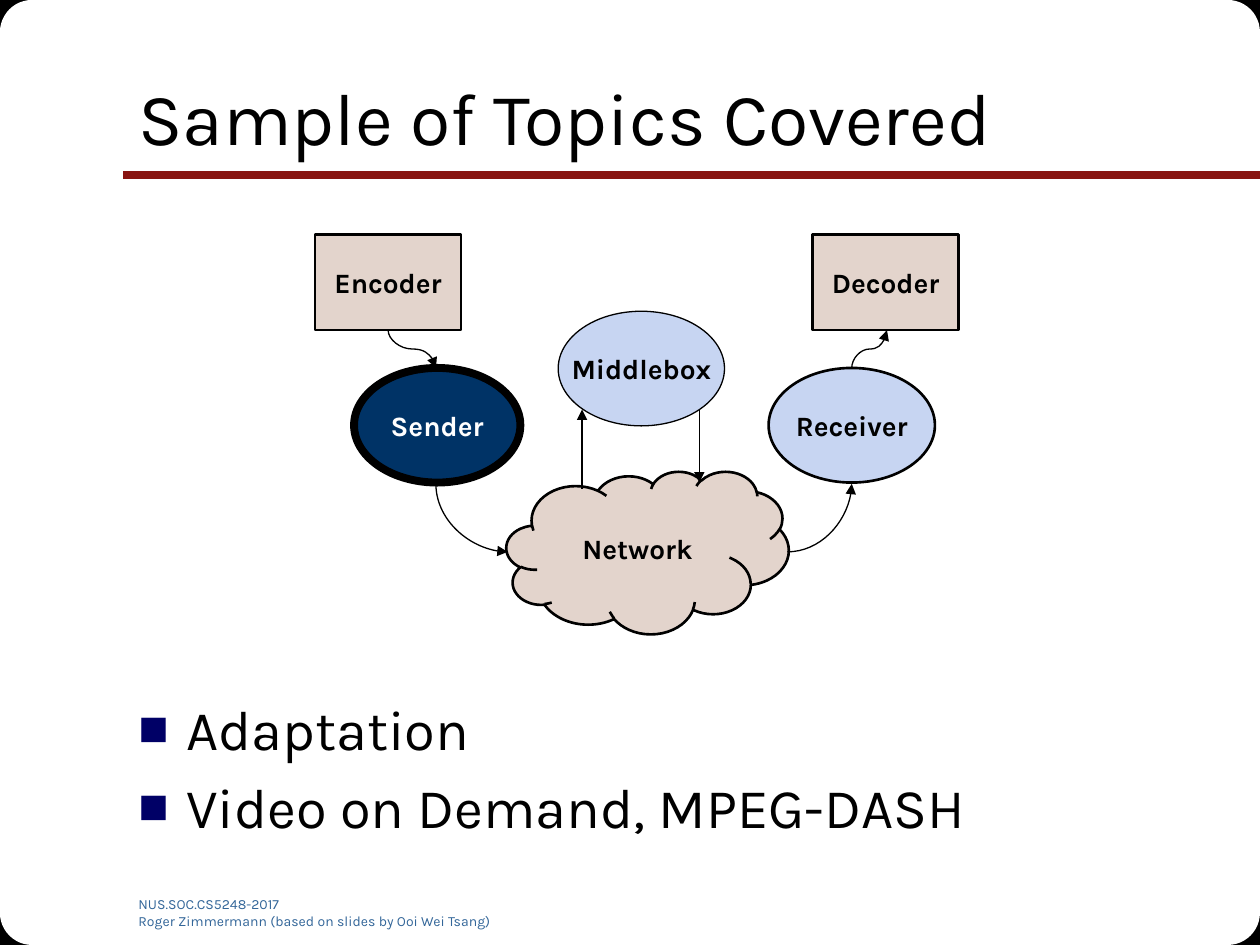
from lxml import etree
from pptx import Presentation
from pptx import util as u
from pptx.dml.color import RGBColor
from pptx.enum import shapes, text
from pptx.oxml.ns import qn

FONT = "Karla"
BLACK = RGBColor(0, 0, 0)
WHITE = RGBColor(255, 255, 255)
RED = RGBColor(0x89, 0x14, 0x11)
STEEL = RGBColor(0x33, 0x66, 0x99)
NAVY = RGBColor(0x00, 0x33, 0x66)
SAND = RGBColor(0xE3, 0xD4, 0xCC)
SKY = RGBColor(0xC7, 0xD5, 0xF2)
BULLET = "000066"

W, H = 10, 7.5
MARGIN = 1
CORNER, ROUND = (0.43, 0.44), (1.53, 1.53)

TITLE = "Sample of Topics Covered"
TOPICS = ["Adaptation", "Video on Demand, MPEG-DASH"]
FOOTER = ["NUS.SOC.CS5248-2017",
          "Roger Zimmermann (based on slides by Ooi Wei Tsang)"]

RECT = shapes.MSO_SHAPE.RECTANGLE
OVAL = shapes.MSO_SHAPE.OVAL
CLOUD = shapes.MSO_SHAPE.CLOUD
SIZES = {RECT: (1.16, 0.76), OVAL: (1.32, 0.91), CLOUD: (2.24, 1.29)}

# label, shape, left, top, fill, line width, text colour
NODES = [
    ("Network", CLOUD, 4.02, 3.74, SAND, 1.5, BLACK),
    ("Encoder", RECT, 2.5, 1.86, SAND, 1.5, BLACK),
    ("Sender", OVAL, 2.81, 2.92, NAVY, 4.5, WHITE),
    ("Middlebox", OVAL, 4.43, 2.47, SKY, 0.75, BLACK),
    ("Receiver", OVAL, 6.1, 2.92, SKY, 1.5, BLACK),
    ("Decoder", RECT, 6.45, 1.86, SAND, 1.5, BLACK),
]

# start, end, preset, whether the curve leaves its start vertically
ARROWS = [
    ((3.08, 2.62), (3.46, 2.92), "curvedConnector3", True),
    ((3.46, 3.84), (4.03, 4.38), "curvedConnector2", True),
    ((4.62, 3.88), (4.62, 3.25), "line", False),
    ((5.55, 3.25), (5.55, 3.83), "line", False),
    ((6.25, 4.38), (6.76, 3.84), "curvedConnector2", False),
    ((6.76, 2.92), (7.04, 2.62), "curvedConnector3", True),
]


def write(sp, lines, size, color=BLACK, bold=False, align=text.PP_ALIGN.LEFT,
          anchor=text.MSO_ANCHOR.TOP, wrap=True):
    tf = sp.text_frame
    tf.word_wrap = wrap
    tf.vertical_anchor = anchor
    for i, line in enumerate(lines):
        p = tf.add_paragraph() if i else tf.paragraphs[0]
        p.alignment = align
        r = p.add_run()
        r.text = line
        r.font.name, r.font.size, r.font.bold = FONT, u.Pt(size), bold
        r.font.color.rgb = color
    return tf


def add_text(slide, box, lines, size, **fmt):
    return write(slide.shapes.add_textbox(*map(u.Inches, box)), lines, size, **fmt)


def add_shape(slide, kind, box, fill, line=None):
    sp = slide.shapes.add_shape(kind, *map(u.Inches, box))
    sp.shadow.inherit = False
    sp.fill.solid()
    sp.fill.fore_color.rgb = fill
    if line:
        sp.line.color.rgb, sp.line.width = BLACK, u.Pt(line)
    else:
        sp.line.fill.background()
    return sp


def add_line(slide, start, end, color, width):
    sp = slide.shapes.add_connector(shapes.MSO_CONNECTOR.STRAIGHT,
                                    *map(u.Inches, (*start, *end)))
    sp.line.color.rgb, sp.line.width = color, u.Pt(width)
    etree.SubElement(sp._element.spPr, qn("a:effectLst"))
    return sp


def add_arrow(slide, start, end, preset, vertical):
    """A curve that leaves vertically is a horizontal one turned by 270 degrees."""
    if vertical:
        (x1, y1), (x2, y2) = start, end
        cx, cy = (x1 + x2) / 2, (y1 + y2) / 2
        dx, dy = (x2 - x1) / 2, (y2 - y1) / 2
        start, end = (cx + dy, cy - dx), (cx - dy, cy + dx)
    sp = add_line(slide, start, end, BLACK, 0.75)
    spPr = sp._element.spPr
    spPr.find(qn("a:prstGeom")).set("prst", preset)
    if vertical:
        spPr.find(qn("a:xfrm")).set("rot", str(270 * 60000))
    etree.SubElement(spPr.find(qn("a:ln")), qn("a:tailEnd"), type="triangle")


def add_bullet(p):
    pPr = p._p.get_or_add_pPr()
    pPr.set("marL", str(u.Inches(0.38)))
    pPr.set("indent", str(-u.Inches(0.38)))
    color = etree.SubElement(pPr, qn("a:buClr"))
    etree.SubElement(color, qn("a:srgbClr"), val=BULLET)
    etree.SubElement(pPr, qn("a:buSzPct"), val="90000")
    etree.SubElement(pPr, qn("a:buFont"), typeface="Arial")
    etree.SubElement(pPr, qn("a:buChar"), char="■")


def add_frame(slide):
    """Black slide corners, rounded off by white squares on top."""
    for kind, (w, h), fill, line in (
            (RECT, CORNER, BLACK, 0.75),
            (shapes.MSO_SHAPE.ROUNDED_RECTANGLE, ROUND, WHITE, None)):
        for x in (0, W - w):
            for y in (0, H - h):
                add_shape(slide, kind, (x, y, w, h), fill, line)


def main():
    prs = Presentation()
    prs.slide_width, prs.slide_height = u.Inches(W), u.Inches(H)
    slide = prs.slides.add_slide(prs.slide_layouts[6])

    add_frame(slide)
    add_line(slide, (W, 1.39), (0.98, 1.39), RED, 4.5)
    add_text(slide, (MARGIN, 7.06, 3.08, 0.28), FOOTER, 8, color=STEEL)
    add_text(slide, (MARGIN, 0.3, 8.5, 1.25), [TITLE], 42,
             anchor=text.MSO_ANCHOR.MIDDLE)
    tf = add_text(slide, (MARGIN, 5.46, 8.5, 1.44), TOPICS, 32)
    for p in tf.paragraphs:
        p.space_before = u.Pt(6.4)
        add_bullet(p)

    for label, kind, x, y, fill, line, color in NODES:
        sp = add_shape(slide, kind, (x, y, *SIZES[kind]), fill, line)
        write(sp, [label], 16, color=color, bold=True, wrap=kind == CLOUD,
              align=text.PP_ALIGN.CENTER, anchor=text.MSO_ANCHOR.MIDDLE)
    for arrow in ARROWS:
        add_arrow(slide, *arrow)

    prs.save("out.pptx")


if __name__ == "__main__":
    main()
